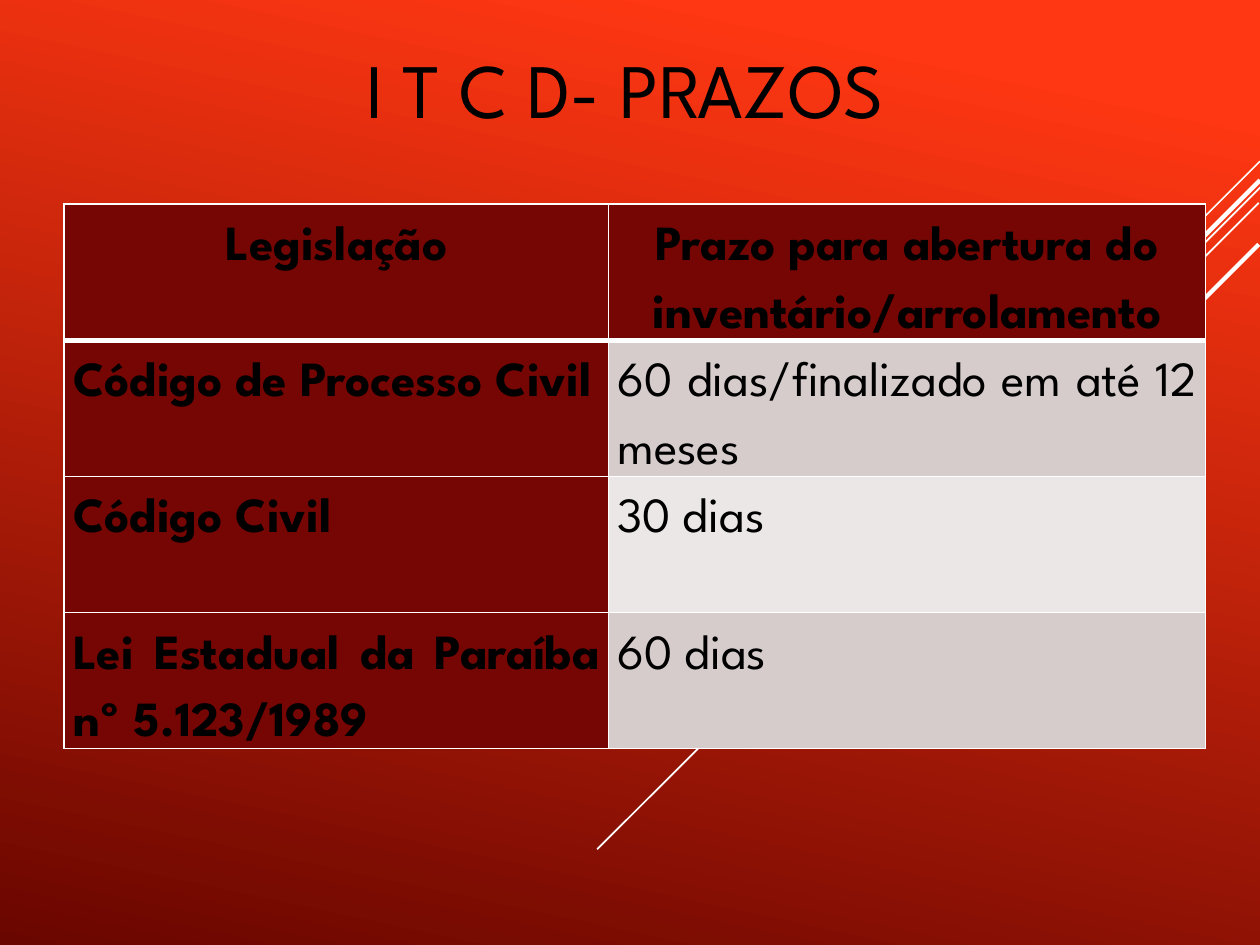
"""Build the slide on ITCD deadlines for opening probate proceedings."""
from lxml import etree
from pptx import Presentation
from pptx.dml.color import RGBColor
from pptx.enum.shapes import MSO_CONNECTOR
from pptx.enum.text import MSO_ANCHOR, PP_ALIGN
from pptx.oxml.ns import qn
from pptx.util import Inches, Pt

COLORS = {
    "bright": "FF3712",
    "deep": "6A0600",
    "label": "760603",
    "band": "D6CCCC",
    "light": "ECE7E7",
    "line": "FFFFFF",
    "text": "000000",
}
FONT = "League Spartan"
STRIPES = [
    (10, 1.28, 6.57, 4.71, 1),
    (10.01, 1.48, 4.74, 6.74, 1),
    (9.99, 1.61, 5.71, 5.89, 1),
    (10, 1.43, 5.8, 5.63, 2.5),
    (9.99, 1.94, 6.24, 5.69, 2.5),
]
DEADLINES = [
    ("Legislação", "Prazo para abertura do inventário/arrolamento"),
    ("Código de Processo Civil", "60 dias/finalizado em até 12 meses"),
    ("Código Civil", "30 dias"),
    ("Lei Estadual da Paraíba nº 5.123/1989", "60 dias"),
]
VALUE_FILLS = ["label", "band", "light", "band"]


def style_text(paragraph, size, bold, alignment):
    paragraph.alignment = alignment
    formats = {"name": FONT, "size": Pt(size), "bold": bold}
    for run in paragraph.runs:
        for attribute, value in formats.items():
            setattr(run.font, attribute, value)
        run.font.color.rgb = RGBColor.from_string(COLORS["text"])


def add_border(cell, side, width):
    border = etree.SubElement(cell._tc.get_or_add_tcPr(), qn(f"a:{side}"), w=str(Pt(width)))
    fill = etree.SubElement(border, qn("a:solidFill"))
    etree.SubElement(fill, qn("a:srgbClr"), val=COLORS["line"])


prs = Presentation()
prs.slide_width, prs.slide_height = Inches(10), Inches(7.5)
slide = prs.slides.add_slide(prs.slide_layouts[5])

background = slide.background.fill
background.gradient()
background.gradient_angle = 360 - 102
for stop, color, position in zip(background.gradient_stops, ("bright", "deep"), (0.1, 1)):
    stop.color.rgb = RGBColor.from_string(COLORS[color])
    stop.position = position

for x1, y1, x2, y2, width in STRIPES:
    stripe = slide.shapes.add_connector(
        MSO_CONNECTOR.STRAIGHT, Inches(x1), Inches(y1), Inches(x2), Inches(y2)
    )
    stripe.line.color.rgb = RGBColor.from_string(COLORS["line"])
    stripe.line.width = Pt(width)
    etree.SubElement(stripe._element.spPr, qn("a:effectLst"))

title = slide.shapes.title
title.left, title.top = Inches(0.67), Inches(0.36)
title.width, title.height = Inches(8.59), Inches(0.75)
title.text_frame.text = "I T C D- PRAZOS"
title.text_frame.vertical_anchor = MSO_ANCHOR.BOTTOM
style_text(title.text_frame.paragraphs[0], 44, False, PP_ALIGN.CENTER)

deadlines = slide.shapes.add_table(
    len(DEADLINES), 2, Inches(0.51), Inches(1.62), Inches(9.06), Inches(4.32)
).table
for column, width in zip(deadlines.columns, (4.32, 4.74)):
    column.width = Inches(width)

margins = {
    "margin_left": Inches(0.07),
    "margin_right": Inches(0.07),
    "margin_top": 0,
    "margin_bottom": 0,
}
for row, texts in enumerate(DEADLINES):
    is_header = row == 0
    for col, text in enumerate(texts):
        cell = deadlines.cell(row, col)
        cell.text = text
        for attribute, value in margins.items():
            setattr(cell, attribute, value)
        paragraph = cell.text_frame.paragraphs[0]
        paragraph.line_spacing = 1.5
        paragraph.space_after = Pt(10)
        alignment = PP_ALIGN.CENTER if is_header else PP_ALIGN.JUSTIFY
        style_text(paragraph, 28, is_header or col == 0, alignment)
        for side in ("lnL", "lnR", "lnT", "lnB"):
            header_edge = (row, side) in ((0, "lnB"), (1, "lnT"))
            add_border(cell, side, 3 if header_edge else 1)
        cell.fill.solid()
        fill_name = "label" if col == 0 else VALUE_FILLS[row]
        cell.fill.fore_color.rgb = RGBColor.from_string(COLORS[fill_name])

prs.save("out.pptx")
